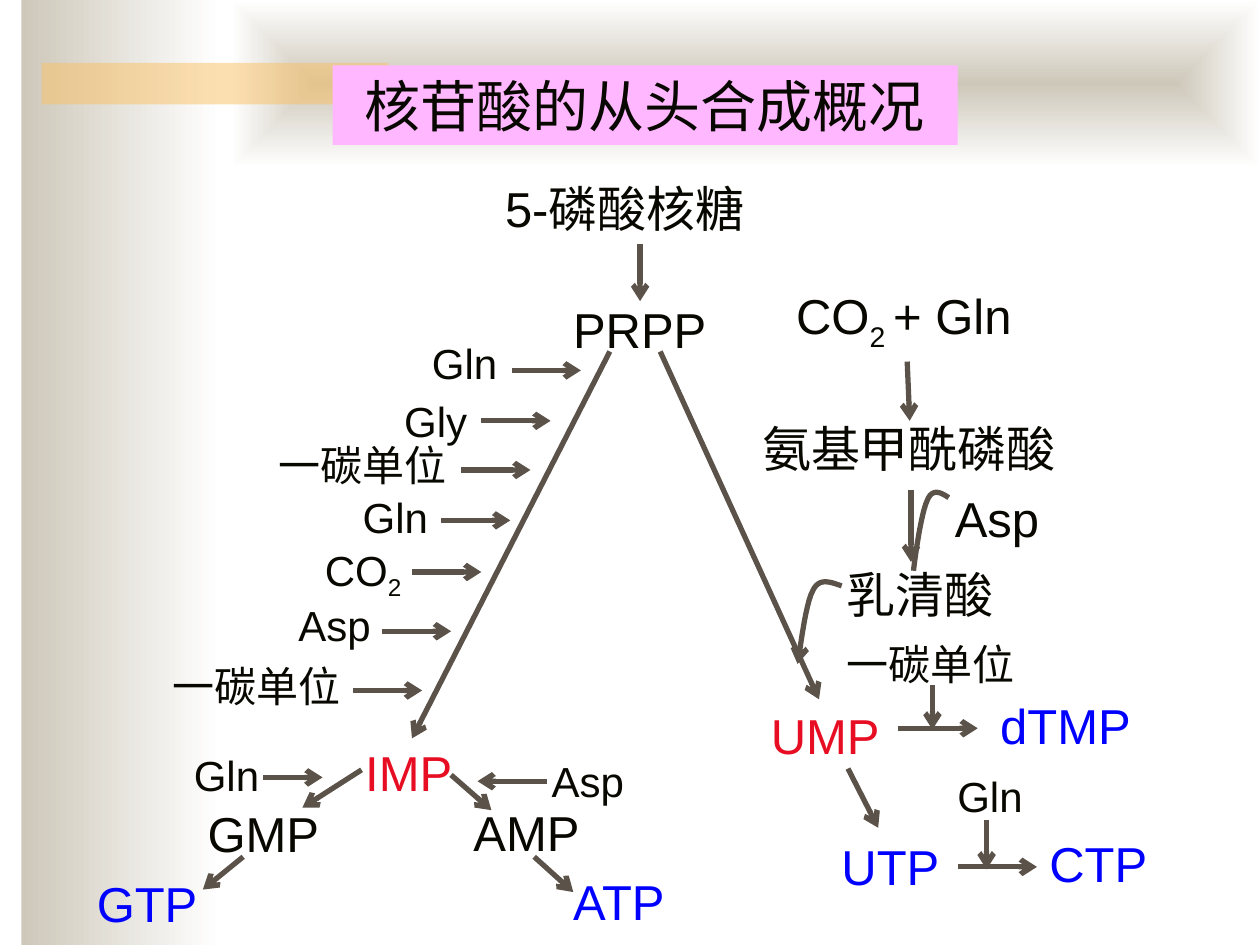
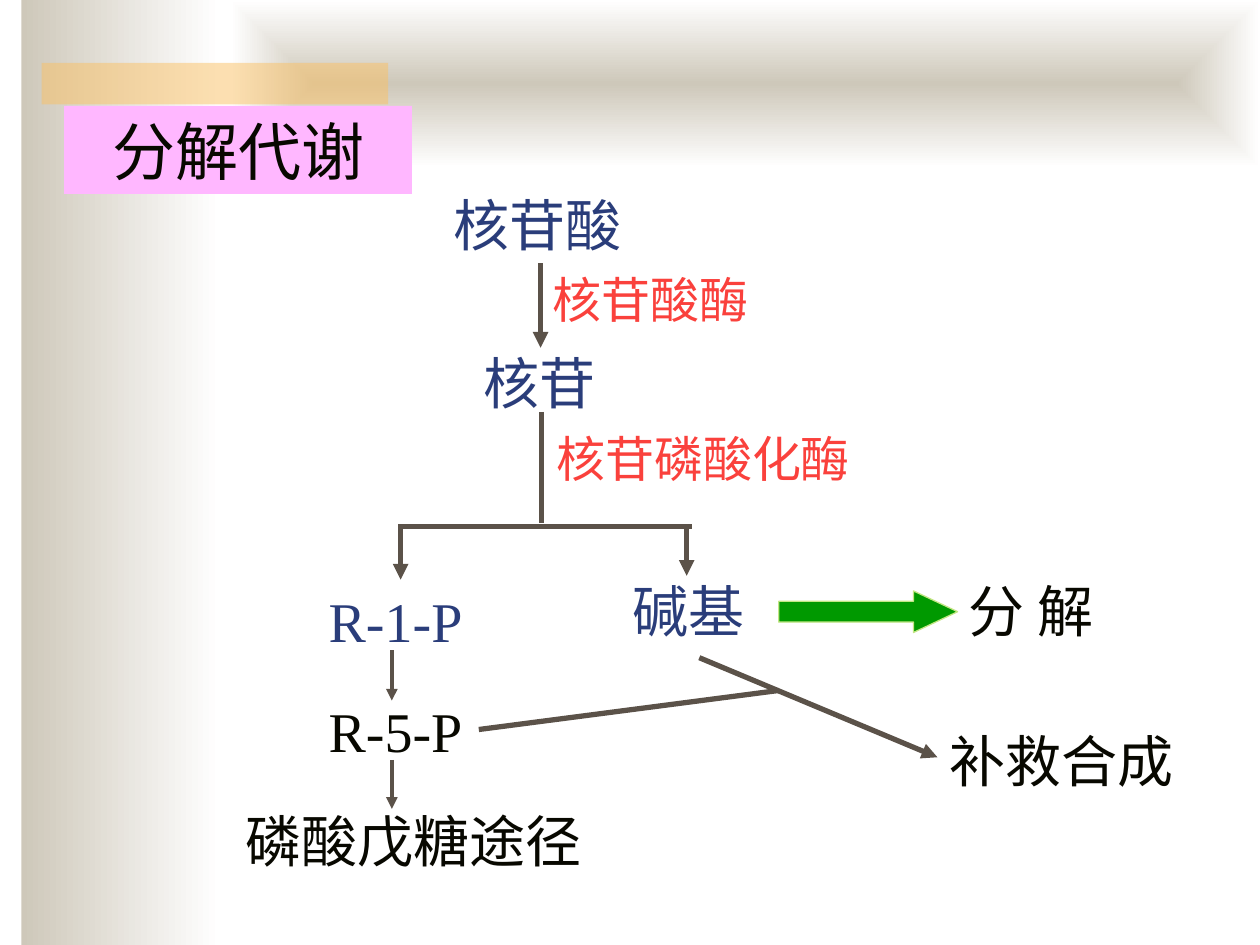
from lxml.etree import SubElement
from pptx import Presentation
from pptx.dml.color import RGBColor
from pptx.enum.shapes import MSO_CONNECTOR, MSO_SHAPE
from pptx.enum.text import MSO_AUTO_SIZE, PP_ALIGN
from pptx.oxml.ns import qn
from pptx.util import Emu, Pt

SCALE = 9144  # EMU in one px, 100 px to the inch
COLORS = {
    "ink": "080800", "red": "E70D22", "blue": "0000FF", "navy": "2A3D7A",
    "coral": "FA413C", "line": "5B5249", "pink": "FFB7FF", "stone": "CEC8BA",
    "white": "FFFFFF", "gold": "FAC164", "green": "009900", "lime": "C3E684",
}
HEIGHTS = {24: 50, 28: 57, 32: 63, 36: 70}  # one-line box by text size
SANS, SERIF = "Arial", "Times New Roman"

# text, left, top, width, colour
NODES = [
    ("PRPP", 445, 233, 126, "ink"),
    ("CO_2 _+ Gln", 622, 222, 199, "ink"),
    ("氨基甲酰磷酸", 595, 327, 255, "ink"),
    ("Asp", 748, 383, 88, "ink"),
    ("乳清酸", 662, 443, 137, "ink"),
    ("UMP", 602, 555, 107, "red"),
    ("dTMP", 784, 547, 126, "blue"),
    ("UTP", 658, 659, 98, "blue"),
    ("CTP", 823, 657, 98, "blue"),
    ("IMP", 280, 584, 89, "red"),
    ("GTP", 67, 688, 100, "blue"),
    ("GMP", 155, 633, 109, "ink"),
    ("ATP", 445, 687, 94, "blue"),
    ("AMP", 366, 632, 107, "ink"),
]
# text, left, top, width, then start of the arrow towards the IMP line
INPUTS = [
    ("Gln", 333, 263, 73, 406, 294),
    ("Gly", 311, 309, 71, 382, 334),
    ("一碳单位", 211, 344, 155, 366, 373),
    ("Gln", 278, 385, 73, 350, 413),
    ("CO_2", 248, 427, 83, 327, 454),
    ("Asp", 227, 471, 78, 303, 501),
    ("一碳单位", 127, 519, 155, 280, 548),
]
DONORS = [
    ("Gln", 144, 590, 73),
    ("Asp", 428, 595, 78),
    ("Gln", 750, 607, 73),
    ("一碳单位", 662, 502, 155),
]
STEPS = [
    (508, 194, 508, 239), (720, 287, 722, 334), (723, 389, 723, 446),
    (524, 279, 650, 555), (484, 279, 327, 586), (713, 578, 776, 578),
    (673, 610, 697, 657), (760, 688, 823, 688), (287, 611, 240, 641),
    (193, 680, 161, 706), (358, 615, 390, 643), (424, 680, 455, 708),
    (209, 617, 256, 617), (434, 620, 379, 620), (783, 651, 783, 690),
    (740, 544, 740, 579),
]
# Bezier points: a start, then two controls and an end for each piece
ASP_CURVE = [(753, 395), (747, 391), (740, 387), (736, 397),
             (731, 407), (726, 444), (725, 453)]
UMP_CURVE = [(668, 465), (659, 462), (650, 458), (645, 469),
             (639, 480), (635, 517), (633, 527)]

# text, left, top, width, size, colour, centred, line spacing
BREAKDOWN = [
    ("分 解", 728, 463, 181, 32, "ink", True, 0.8),
    ("补救合成", 744, 572, 244, 32, "ink", False, None),
    ("核苷酸", 350, 146, 158, 32, "navy", False, None),
    ("核苷", 374, 272, 117, 32, "navy", False, None),
    ("R-1-P", 193, 461, 242, 32, "navy", True, None),
    ("碱基", 492, 453, 117, 32, "navy", False, None),
    ("核苷酸酶", 429, 209, 183, 28, "coral", False, None),
    ("核苷磷酸化酶", 424, 348, 268, 28, "coral", True, 0.7),
    ("R-5-P", 251, 548, 140, 32, "ink", False, None),
    ("磷酸戊糖途径", 185, 635, 299, 32, "ink", False, None),
]
# start, end, width in points, arrowhead
PATHS = [
    (429, 209, 429, 276, 3, "triangle"),
    (430, 327, 430, 415, 3, None),
    (316, 418, 549, 418, 3, None),
    (318, 418, 318, 460, 3, "triangle"),
    (545, 416, 545, 457, 3, "triangle"),
    (311, 516, 311, 556, 2.25, "triangle"),
    (311, 603, 311, 642, 2.25, "triangle"),
    (555, 522, 744, 601, 3, "triangle"),
    (380, 579, 618, 548, 3, None),
]


def px(*sizes):
    return [Emu(round(size * SCALE)) for size in sizes]


def tint(name):
    return RGBColor.from_string(COLORS[name])


def add_block(slide, kind, area, color):
    block = slide.shapes.add_shape(kind, *px(*area))
    block.shadow.inherit = False
    block.line.fill.background()
    block.fill.solid()
    block.fill.fore_color.rgb = tint(color)
    return block


def add_fade(slide, area):
    """Add a band that fades from stone to white, left to right."""
    band = add_block(slide, MSO_SHAPE.RECTANGLE, area, "stone")
    band.fill.gradient()
    band.fill.gradient_angle = 0
    for stop, name, place in zip(band.fill.gradient_stops, ("stone", "white"), (0, 1)):
        stop.color.rgb = tint(name)
        stop.position = place
    return band


def add_frame(slide):
    """Add the side band, top band and gold bar that both slides share."""
    add_fade(slide, (17, 0, 158, 750))
    top = add_fade(slide, (183, 0, 817, 133))
    grad = top.element.spPr.find(qn("a:gradFill"))
    grad.remove(grad.find(qn("a:lin")))
    path = SubElement(grad, qn("a:path"), path="shape")
    SubElement(path, qn("a:fillToRect"), l="50000", t="50000", r="50000", b="50000")
    bar = add_block(slide, MSO_SHAPE.RECTANGLE, (33, 50, 275, 33), "gold")
    color = next(bar.element.spPr.iter(qn("a:srgbClr")))
    SubElement(color, qn("a:alpha"), val="50000")


def add_text(slide, text, left, top, width, size, color="ink", font=SANS,
             wrap=False, center=False, spacing=None):
    """Add a one-paragraph box; underscores enclose a subscript."""
    box = slide.shapes.add_textbox(*px(left, top, width, HEIGHTS[size]))
    frame = box.text_frame
    frame.word_wrap = wrap
    frame.auto_size = MSO_AUTO_SIZE.SHAPE_TO_FIT_TEXT
    para = frame.paragraphs[0]
    first, *rest = text.split("_")
    para.text = first
    for part in rest:
        para.add_run().text = part
    para.alignment = PP_ALIGN.CENTER if center else PP_ALIGN.LEFT
    if spacing:
        para.line_spacing = spacing
    for index, run in enumerate(para.runs):
        run.font.size = Pt(size)
        run.font.name = font
        run.font.color.rgb = tint(color)
        if index % 2:
            run.font._element.set("baseline", "-25000")
    return box


def add_title(slide, text, left, top, width, size, font):
    box = add_text(slide, text, left, top, width, size, font=font, wrap=True, center=True)
    box.fill.solid()
    box.fill.fore_color.rgb = tint("pink")


def style_line(shape, weight, head):
    shape.line.color.rgb = tint("line")
    shape.line.width = Pt(weight)
    props = shape.element.spPr
    if head:
        SubElement(props.find(qn("a:ln")), qn("a:tailEnd"), type=head)
    if props.find(qn("a:effectLst")) is None:
        SubElement(props, qn("a:effectLst"))


def add_line(slide, ends, weight=3, head="arrow"):
    line = slide.shapes.add_connector(MSO_CONNECTOR.STRAIGHT, *px(*ends))
    style_line(line, weight, head)


def add_curve(slide, knots, head=None):
    """Draw a chain of cubic Bezier pieces as short segments."""
    points = []
    for start in range(0, len(knots) - 1, 3):
        piece = knots[start:start + 4]
        for step in range(1, 13):
            t = step / 12
            shares = ((1 - t) ** 3, 3 * t * (1 - t) ** 2, 3 * t * t * (1 - t), t ** 3)
            points.append(px(*(sum(s * knot[axis] for s, knot in zip(shares, piece))
                               for axis in (0, 1))))
    path = slide.shapes.build_freeform(*px(*knots[0]), scale=1.0)
    path.add_line_segments(points, close=False)
    curve = path.convert_to_shape()
    curve.fill.background()
    style_line(curve, 3, head)


def build_making(slide):
    add_title(slide, "核苷酸的从头合成概况", 264, 52, 496, 32, SANS)
    add_text(slide, "5-磷酸核糖", 391, 137, 211, 28, wrap=True)
    for text, left, top, width, color in NODES:
        add_text(slide, text, left, top, width, 28, color)
    for text, left, top, width, x, y in INPUTS:
        add_text(slide, text, left, top, width, 24)
        add_line(slide, (x, y, x + 55, y))
    for donor in DONORS:
        add_text(slide, *donor, 24)
    for ends in STEPS:
        add_line(slide, ends)
    add_curve(slide, ASP_CURVE)
    add_curve(slide, UMP_CURVE, "arrow")


def build_breakdown(slide):
    arrow = add_block(slide, MSO_SHAPE.RIGHT_ARROW, (618, 469, 142, 33), "green")
    arrow.adjustments[1] = 1.06
    arrow.line.color.rgb = tint("lime")
    arrow.line.width = Pt(0.75)
    for text, left, top, width, size, color, center, spacing in BREAKDOWN:
        add_text(slide, text, left, top, width, size, color, SERIF, True, center, spacing)
    for *ends, weight, head in PATHS:
        add_line(slide, ends, weight, head)
    add_title(slide, "分解代谢", 51, 84, 276, 36, "Roboto")


def main():
    deck = Presentation()
    deck.slide_width, deck.slide_height = px(1000, 750)
    for build in (build_making, build_breakdown):
        slide = deck.slides.add_slide(deck.slide_layouts[6])
        add_frame(slide)
        build(slide)
    deck.save("out.pptx")


if __name__ == "__main__":
    main()
